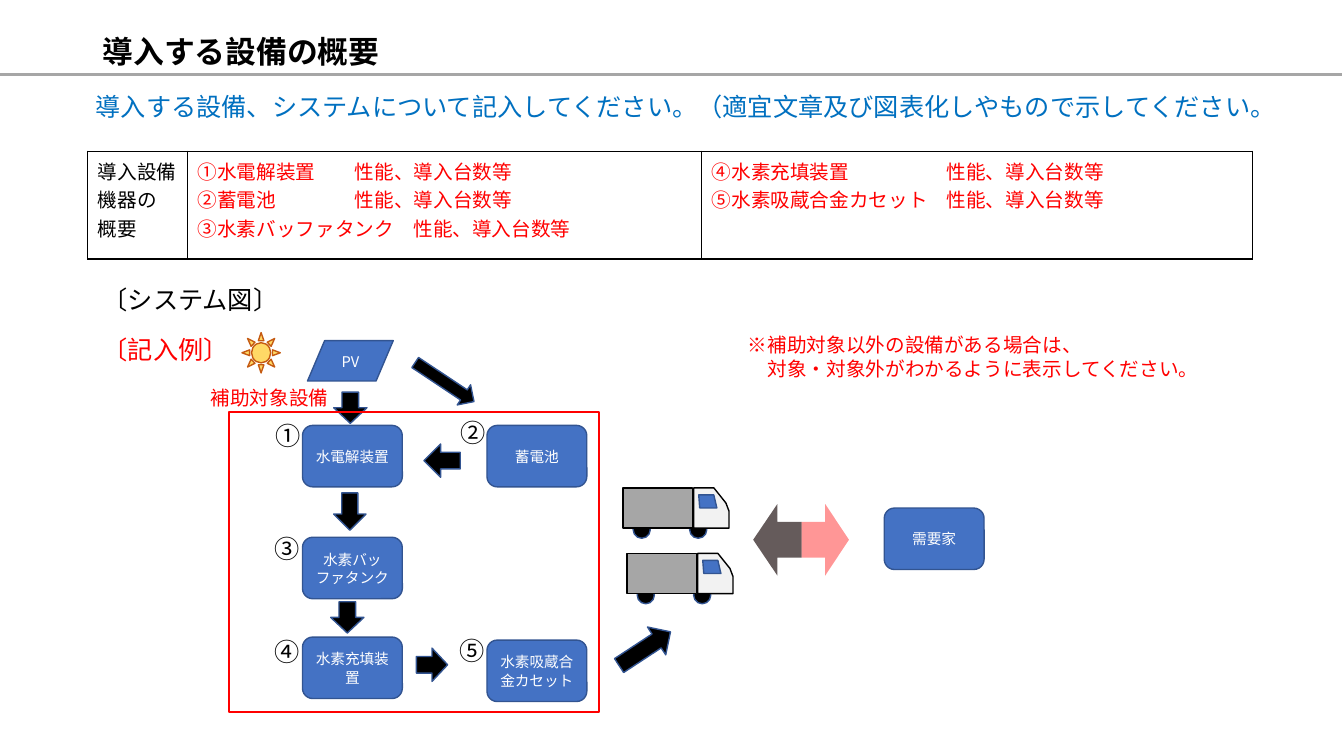
from lxml import etree
from pptx import Presentation
from pptx import util as u
from pptx.dml.color import RGBColor
from pptx.enum import shapes, text
from pptx.oxml import ns

PX = 9144  # 100 px to the inch
KIND = shapes.MSO_SHAPE
COLORS = {
    "black": "000000", "white": "FFFFFF", "red": "FF0000", "hint": "0070C0",
    "box": "4472C4", "edge": "325491", "rule": "A6A6A6", "cab": "F2F2F2",
    "sun": "FFD966", "ray": "C55A11", "return": "655B5B",
}


def rgb(name):
    return RGBColor.from_string(COLORS[name])


def px(*lengths):
    return [u.Emu(length * PX) for length in lengths]


def sub(parent, tag, **attributes):
    return etree.SubElement(parent, ns.qn(tag), attributes)


class Board:
    font = "Noto Sans CJK JP"

    def __init__(self, slide):
        self.slide = slide

    def add_words(self, paragraph, words, size, color, bold=False):
        run = paragraph.add_run()
        run.text = words
        run.font.size = u.Pt(size)
        run.font.bold = bold
        run.font.name = self.font
        run.font.color.rgb = rgb(color)
        sub(run.font._element, "a:ea", typeface=self.font)

    def paint(self, shape, fill, line, width=1):
        shape.shadow.inherit = False
        if fill:
            shape.fill.solid()
            shape.fill.fore_color.rgb = rgb(fill)
        else:
            shape.fill.background()
        if line:
            shape.line.color.rgb = rgb(line)
            shape.line.width = u.Pt(width)
        else:
            shape.line.fill.background()
        return shape

    def shape(self, kind, at, fill, line="edge", width=1, turn=0, onto=None):
        shape = (onto or self.slide).shapes.add_shape(kind, *px(*at))
        shape.rotation = turn
        return self.paint(shape, fill, line, width)

    def outline(self, points, fill, line, onto):
        pen = onto.shapes.build_freeform(*points[0], scale=PX)
        pen.add_line_segments(points[1:], close=True)
        self.paint(pen.convert_to_shape(), fill, line)

    def box(self, label, at, kind=KIND.ROUNDED_RECTANGLE):
        frame = self.shape(kind, at, "box").text_frame
        frame.word_wrap = True
        frame.vertical_anchor = text.MSO_ANCHOR.MIDDLE
        paragraph = frame.paragraphs[0]
        paragraph.alignment = text.PP_ALIGN.CENTER
        paragraph.line_spacing = u.Pt(13)
        self.add_words(paragraph, label, 10.5, "white")

    def label(self, words, at, size=18, color="black"):
        frame = self.slide.shapes.add_textbox(*px(*at)).text_frame
        frame.word_wrap = True
        paragraph = frame.paragraphs[0]
        paragraph.line_spacing = u.Pt(round(size * 1.22, 1))
        self.add_words(paragraph, words, size, color)
        return frame

    def title(self, words, at):
        frame = self.slide.shapes.add_textbox(*px(*at)).text_frame
        frame.word_wrap = True
        frame.vertical_anchor = text.MSO_ANCHOR.MIDDLE
        frame.paragraphs[0].line_spacing = 0.9
        self.add_words(frame.paragraphs[0], words, 22, "black", bold=True)

    def rule(self, left, right, y):
        line = self.slide.shapes.add_connector(
            shapes.MSO_CONNECTOR.STRAIGHT, *px(left, y, right, y))
        line.line.color.rgb = rgb("rule")
        line.line.width = u.Pt(2.5)
        sub(line._element.spPr, "a:effectLst")

    def cell(self, cell, lines, color):
        """Fill one cell; each line is its words and a tab stop or None."""
        for number, (words, stop) in enumerate(lines):
            frame = cell.text_frame
            paragraph = frame.add_paragraph() if number else frame.paragraphs[0]
            if stop:
                stops = sub(paragraph._p.get_or_add_pPr(), "a:tabLst")
                sub(stops, "a:tab", pos=str(stop * PX), algn="l")
            self.add_words(paragraph, words, 14, color)
        properties = cell._tc.get_or_add_tcPr()
        for side in "LRTB":
            border = sub(properties, "a:ln" + side, w=str(u.Pt(1)))
            sub(sub(border, "a:solidFill"), "a:srgbClr", val=COLORS["black"])
        cell.fill.background()

    def table(self, at, widths, columns):
        table = self.slide.shapes.add_table(1, len(widths), *px(*at)).table
        table.first_row = table.horz_banding = False
        for column, width in zip(table.columns, px(*widths)):
            column.width = width
        for cell, (lines, color) in zip(table.rows[0].cells, columns):
            self.cell(cell, lines, color)

    def truck(self, x, y):
        group = self.slide.shapes.add_group_shape()
        for wheel in (10, 66):
            self.shape(KIND.FLOWCHART_CONNECTOR, (x + wheel, y + 33, 17, 17),
                       "black", onto=group)
        self.shape(KIND.FLOWCHART_PROCESS, (x, y, 69, 40), "rule", "black", onto=group)
        cab = [(70, 0), (90, 0), (102, 15), (105, 23), (105, 40), (70, 40)]
        window = [(76, 20), (75, 7), (90, 7), (93, 20)]
        for points, fill, line in ((cab, "cab", "black"), (window, "box", "edge")):
            self.outline([(x + dx, y + dy) for dx, dy in points], fill, line, group)


def main():
    deck = Presentation()
    deck.slide_width, deck.slide_height = px(1333, 750)
    board = Board(deck.slides.add_slide(deck.slide_layouts[6]))

    board.title("導入する設備の概要", (92, 30, 1150, 46))
    board.rule(-2, 1331, 74)
    board.table((87, 150, 1155, 107), (99, 510, 546), [
        ([("導入設備機器の", None), ("概要", None)], "black"),
        ([("①水電解装置\t性能、導入台数等", 156),
          ("②蓄電池\t性能、導入台数等", 156),
          ("③水素バッファタンク\t性能、導入台数等", 214)], "red"),
        ([("④水素充填装置\t性能、導入台数等", 233),
          ("⑤水素吸蔵合金カセット\t性能、導入台数等", 233)], "red"),
    ])

    board.shape(KIND.SUN, (240, 330, 38, 40), "sun", "ray")
    board.box("PV", (305, 338, 85, 40), KIND.FLOWCHART_DATA)
    for name, x, y in (("水電解装置", 300, 422), ("蓄電池", 483, 422),
                       ("水素バッファタンク", 300, 533), ("水素充填装置", 300, 632),
                       ("水素吸蔵合金カセット", 483, 635), ("需要家", 877, 504)):
        board.box(name, (x, y, 99, 61))

    for at, turn in (((331, 389, 33, 31), 0), ((331, 489, 32, 37), 0),
                     ((328, 597, 33, 31), 0), ((422, 439, 33, 36), 90),
                     ((412, 644, 33, 31), 270), ((429, 344, 24, 70), 303.6),
                     ((623, 613, 33, 61), 236.7)):
        board.shape(KIND.DOWN_ARROW, at, "black", turn=turn)

    board.truck(622, 549)
    board.truck(618, 484)
    board.shape(KIND.LEFT_ARROW, (747, 500, 48, 71), "return", None)
    delivery = board.shape(KIND.RIGHT_ARROW, (795, 500, 47, 71), "red", None)
    tint = delivery._element.spPr.find(".//" + ns.qn("a:srgbClr"))
    sub(tint, "a:alpha", val="41000")

    board.label("導入する設備、システムについて記入してください。"
                "（適宜文章及び図表化しやもので示してください。",
                (85, 85, 1205, 40), color="hint")
    for number, x, y in (("①", 263, 412), ("②", 447, 409), ("③", 262, 524),
                         ("④", 262, 626), ("⑤", 446, 625)):
        board.label(number, (x, y, 46, 40))
    board.shape(KIND.RECTANGLE, (227, 409, 367, 297), None, "red", 1.5)
    board.label("〔システム図〕", (92, 277, 206, 40))
    board.label("〔記入例〕", (92, 326, 176, 40), color="red")
    board.label("補助対象設備", (199, 378, 140, 34), 14, "red")
    note = board.label("※補助対象以外の設備がある場合は、", (732, 325, 510, 57), 14, "red")
    detail = note.add_paragraph()
    detail.line_spacing = note.paragraphs[0].line_spacing
    detail._p.get_or_add_pPr().set("marL", str(u.Pt(14)))
    board.add_words(detail, "対象・対象外がわかるように表示してください。", 14, "red")

    deck.save("out.pptx")


if __name__ == "__main__":
    main()
